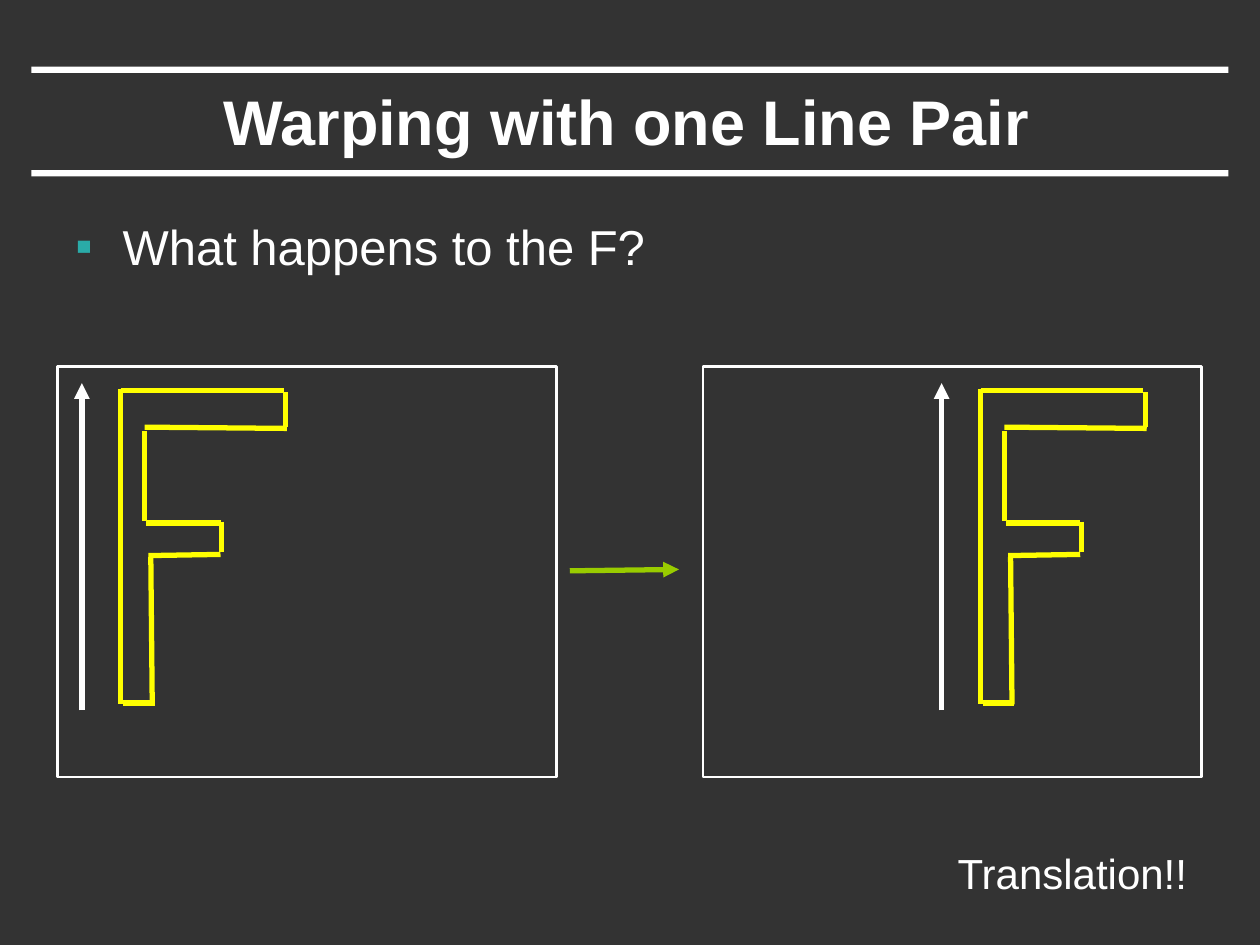
import pptx
import pptx.util
import pptx.dml.color
import pptx.enum.shapes
import pptx.enum.text
import pptx.oxml
import pptx.oxml.ns

Pt = pptx.util.Pt
RGBColor = pptx.dml.color.RGBColor
SHAPE = pptx.enum.shapes.MSO_SHAPE
ALIGN = pptx.enum.text.PP_ALIGN
ANCHOR = pptx.enum.text.MSO_ANCHOR

DARK = RGBColor(0x33, 0x33, 0x33)
WHITE = RGBColor(0xFF, 0xFF, 0xFF)
YELLOW = RGBColor(0xFF, 0xFF, 0x00)
GREEN = RGBColor(0x99, 0xCC, 0x00)
TEAL = RGBColor(0x2A, 0xAB, 0xA8)

F_STROKES = [
    (0, 0, 0, 180), (0, 0.7, 93, 0.7), (94.3, 1.4, 94.3, 21.6),
    (95, 22.3, 13.7, 21.6), (13.7, 23.8, 13.7, 75), (14.4, 76.3, 57, 76.3),
    (57.6, 75.6, 57.6, 93), (57, 94.3, 15.8, 95), (17.2, 95.8, 18, 180),
    (1.4, 179.3, 19.4, 179.3),
]


def add_xml(parent, tag, **attrs):
    """Append a drawing element with the given attributes and return it."""
    element = pptx.oxml.parse_xml(f"<a:{tag} {pptx.oxml.ns.nsdecls('a')}/>")
    for name, value in attrs.items():
        element.set(name, value)
    parent.append(element)
    return element


def add_line(shapes, x1, y1, x2, y2, color, arrow=False):
    """Draw a 3 pt line, with an arrowhead at its end if asked."""
    line = shapes.add_connector(pptx.enum.shapes.MSO_CONNECTOR.STRAIGHT,
                                Pt(x1), Pt(y1), Pt(x2), Pt(y2))
    line.line.color.rgb = color
    line.line.width = Pt(3)
    if arrow:
        add_xml(line.line._get_or_add_ln(), "tailEnd", type="triangle")
    add_xml(line._element.spPr, "effectLst")


def add_text(s, x, y, w, h, text, size, align, wrap=True, bold=False):
    """Place a one-paragraph white text box and return its frame."""
    tf = s.shapes.add_textbox(Pt(x), Pt(y), Pt(w), Pt(h)).text_frame
    tf.text = text
    tf.word_wrap = wrap
    p = tf.paragraphs[0]
    p.alignment = align
    font = p.runs[0].font
    font.name, font.size, font.bold = "Arial", Pt(size), bold
    font.color.rgb = WHITE
    return tf


def add_title(s, x, y, w, h):
    """Place the title between two white bars."""
    bar = 3.6
    for top in (y, y + h - bar):
        sp = s.shapes.add_shape(SHAPE.RECTANGLE, Pt(x), Pt(top), Pt(w), Pt(bar))
        sp.shadow.inherit = False
        sp.fill.solid()
        sp.fill.fore_color.rgb = WHITE
        sp.line.fill.background()
    tf = add_text(s, x + 35, y + bar, w - 74, 54, "Warping with one Line Pair",
                  36, ALIGN.CENTER, bold=True)
    tf.vertical_anchor = ANCHOR.MIDDLE


def add_question(s, x, y, w, h):
    """Place the bulleted question."""
    tf = add_text(s, x, y, w, h, "What happens to the F?", 28, ALIGN.LEFT)
    pPr = tf.paragraphs[0]._p.get_or_add_pPr()
    pPr.set("marL", str(Pt(27)))
    pPr.set("indent", str(Pt(-27)))
    add_xml(add_xml(pPr, "spcBef"), "spcPct", val="50000")
    add_xml(add_xml(pPr, "buClr"), "srgbClr", val=str(TEAL))
    add_xml(pPr, "buFont", typeface="Arial")
    add_xml(pPr, "buChar", char="▪")


def add_panel(s, x, y, w, h, shift):
    """Draw a frame holding the line and the F, moved right by shift."""
    group = s.shapes.add_group_shape()
    left, top = x + shift + 36, y + 13
    for x1, y1, x2, y2 in F_STROKES:
        add_line(group.shapes, left + x1, top + y1, left + x2, top + y2, YELLOW)
    axis = x + shift + 13.8
    add_line(s.shapes, axis, y + 196.5, axis, y + 9.4, WHITE, arrow=True)
    sp = s.shapes.add_shape(SHAPE.RECTANGLE, Pt(x), Pt(y), Pt(w), Pt(h))
    sp.shadow.inherit = False
    sp.fill.background()
    sp.line.color.rgb = WHITE
    sp.line.width = Pt(1.5)


def main():
    """Build and save the slide."""
    prs = pptx.Presentation()
    prs.slide_width, prs.slide_height = Pt(720), Pt(540)
    s = prs.slides.add_slide(prs.slide_layouts[6])
    s.background.fill.solid()
    s.background.fill.fore_color.rgb = DARK
    add_title(s, 18, 38.1, 684, 62.7)
    for x, shift in ((33, 0), (401.8, 122.5)):
        add_panel(s, x, 209.5, 285, 234.6, shift)
    add_line(s.shapes, 325.6, 326.2, 388, 325.4, GREEN, arrow=True)
    add_question(s, 36, 120.2, 648, 396)
    add_text(s, 539.3, 481, 147, 36, "Translation!!", 24, ALIGN.CENTER, wrap=False)
    prs.save("out.pptx")


if __name__ == "__main__":
    main()
